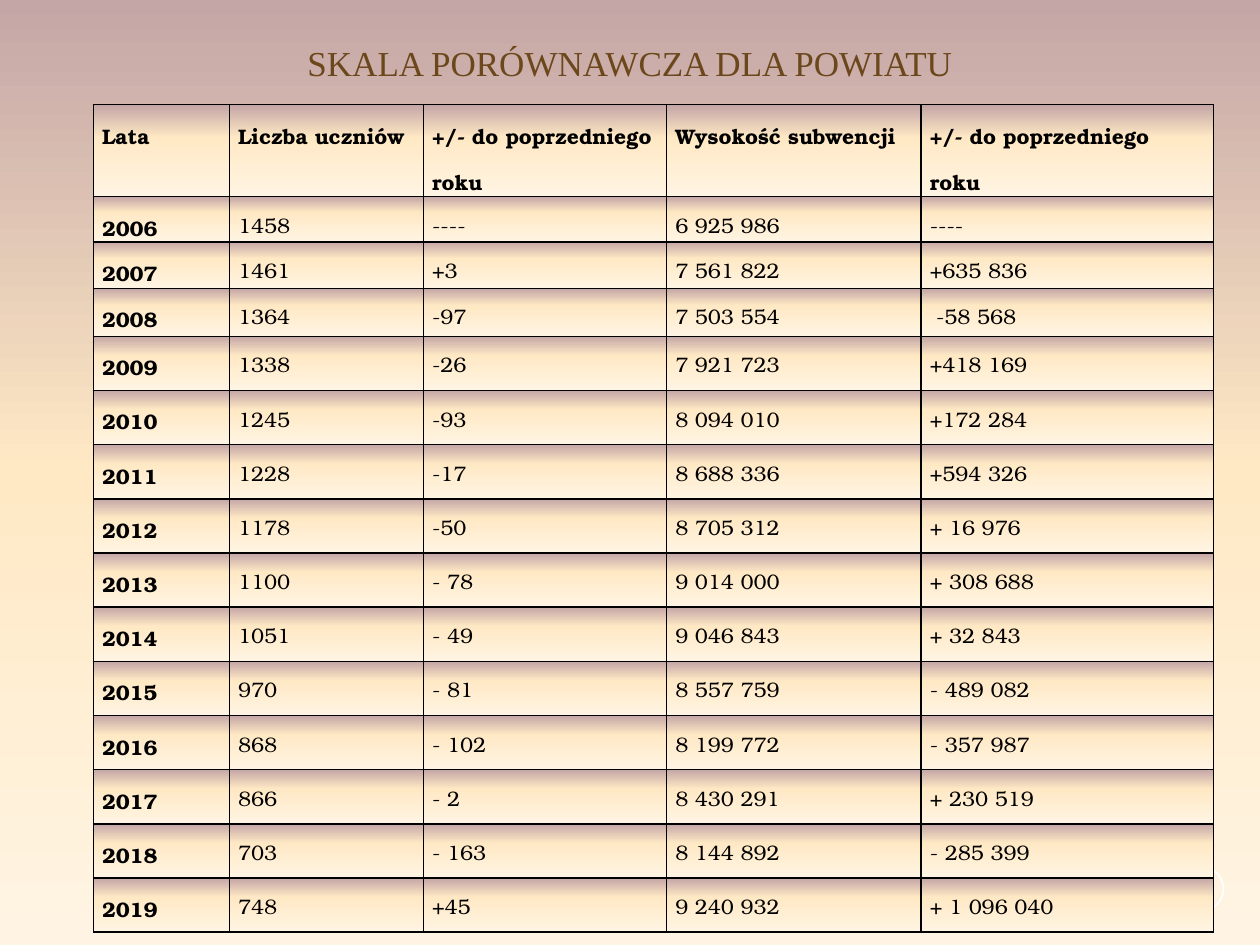
from copy import deepcopy

from pptx import Presentation
from pptx.dml.color import RGBColor as RGB
from pptx.enum.shapes import MSO_SHAPE as SHAPE
from pptx.enum.text import MSO_ANCHOR as ANCHOR, PP_ALIGN as ALIGN
from pptx.oxml import parse_xml
from pptx.oxml.ns import nsdecls, qn
from pptx.util import Inches, Pt

MAUVE = RGB(0xC4, 0xA6, 0xA6)
PEACH = RGB(0xFF, 0xE9, 0xC5)
CREAM = RGB(0xFF, 0xF4, 0xE3)
BROWN = RGB(0x6B, 0x47, 0x1B)
BLACK = RGB(0, 0, 0)
WHITE = RGB(0xFF, 0xFF, 0xFF)

SERIF = "Times New Roman"
BOOK = "TeX Gyre Bonum"

HEAD = ("Lata", "Liczba uczniów", "+/- do poprzedniego roku",
        "Wysokość subwencji", "+/- do poprzedniego roku")
DATA = (
    ("2006", "1458", "----", "6 925 986", "----"),
    ("2007", "1461", "+3", "7 561 822", "+635 836"),
    ("2008", "1364", "-97", "7 503 554", "-58 568"),
    ("2009", "1338", "-26", "7 921 723", "+418 169"),
    ("2010", "1245", "-93", "8 094 010", "+172 284"),
    ("2011", "1228", "-17", "8 688 336", "+594 326"),
    ("2012", "1178", "-50", "8 705 312", "+ 16 976"),
    ("2013", "1100", "- 78", "9 014 000", "+ 308 688"),
    ("2014", "1051", "- 49", "9 046 843", "+ 32 843"),
    ("2015", "970", "- 81", "8 557 759", "- 489 082"),
    ("2016", "868", "- 102", "8 199 772", "- 357 987"),
    ("2017", "866", "- 2", "8 430 291", "+ 230 519"),
    ("2018", "703", "- 163", "8 144 892", "- 285 399"),
    ("2019", "748", "+45", "9 240 932", "+ 1 096 040"),
)
COLS = (1.08, 1.54, 1.93, 2.02, 2.32)
ROWS = (0.73, 0.36, 0.37, 0.38) + (0.43,) * 11


def blend(fill, owner, middle):
    """Fill top to bottom from mauve through peach to cream."""
    fill.gradient()
    fill.gradient_angle = 270
    stops = owner.find(".//" + qn("a:gsLst"))
    stops.append(deepcopy(stops[0]))
    for stop, place, color in zip(fill.gradient_stops, (0, middle, 1),
                                  (MAUVE, PEACH, CREAM)):
        stop.position = place
        stop.color.rgb = color


def write(frame, text, font=BOOK, size=12, color=BLACK, bold=False,
          align=ALIGN.LEFT, lead=1.5):
    frame.word_wrap = True
    para = frame.paragraphs[0]
    para.alignment = align
    para.line_spacing = lead
    run = para.add_run()
    run.text = text
    run.font.name = font
    run.font.size = Pt(size)
    run.font.bold = bold
    run.font.color.rgb = color
    return para


deck = Presentation()
deck.slide_width, deck.slide_height = Inches(10), Inches(7.5)
slide = deck.slides.add_slide(deck.slide_layouts[6])
blend(slide.background.fill, slide.element, 0.5)

ring = slide.shapes.add_shape(SHAPE.OVAL, Inches(9.36), Inches(6.88),
                              Inches(0.35), Inches(0.35))
ring.shadow.inherit = False
ring.fill.background()
ring.line.color.rgb = WHITE
ring.line.width = Pt(1)

title = slide.shapes.add_textbox(Inches(0.75), Inches(0.21),
                                 Inches(8.5), Inches(0.62))
title.text_frame.vertical_anchor = ANCHOR.MIDDLE
write(title.text_frame, "SKALA PORÓWNAWCZA DLA POWIATU", font=SERIF,
      size=20, color=BROWN, align=ALIGN.CENTER, lead=0.9)

table = slide.shapes.add_table(len(ROWS), len(COLS), Inches(0.74), Inches(0.83),
                               Inches(sum(COLS)), Inches(sum(ROWS))).table
table.first_row = table.horz_banding = False
for col, width in zip(table.columns, COLS):
    col.width = Inches(width)
for row, height in zip(table.rows, ROWS):
    row.height = Inches(height)

for r, texts in enumerate((HEAD,) + DATA):
    for c, text in enumerate(texts):
        cell = table.cell(r, c)
        cell.margin_left = cell.margin_right = Inches(0.07)
        cell.margin_top = cell.margin_bottom = 0
        para = write(cell.text_frame, text, bold=r == 0 or c == 0)
        if text == "-58 568":
            para._p.get_or_add_pPr().set("indent", str(Inches(0.05)))
        props = cell._tc.get_or_add_tcPr()
        blend(cell.fill, props, 0.36)
        for i, side in enumerate("LRTB"):
            props.insert(i, parse_xml(
                f'<a:ln{side} {nsdecls("a")} w="{Pt(1)}"><a:solidFill>'
                f'<a:srgbClr val="{BLACK}"/></a:solidFill></a:ln{side}>'))

deck.save("out.pptx")
